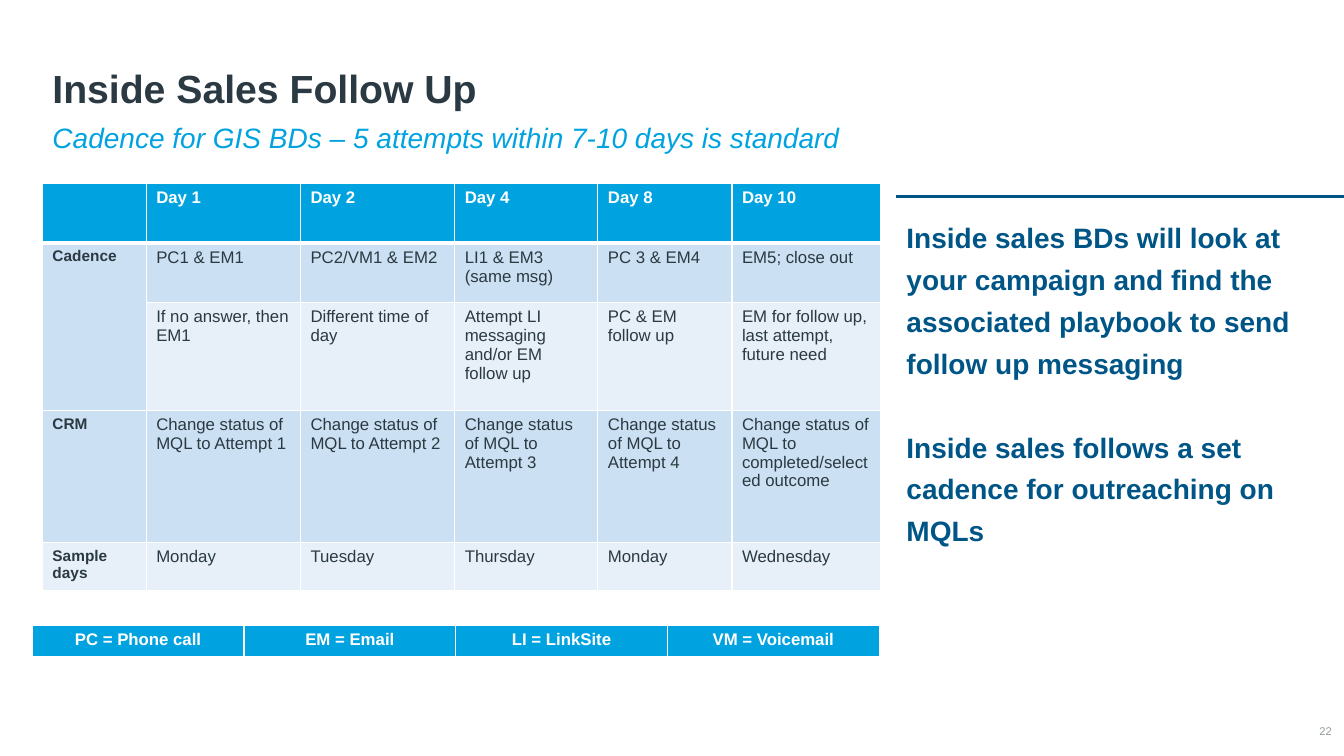
from lxml import etree
from pptx import Presentation
from pptx.dml.color import RGBColor
from pptx.enum import shapes, text
from pptx.oxml import ns
from pptx.util import Inches, Pt

THEME = {
    "font": "Arial",
    "ink": "2B3A42", "cyan": "00A3E0", "navy": "005587", "grey": "959CA0",
    "white": "FFFFFF", "band": "CCE0F3", "pale": "E7F0F9",
    "title": 28, "lead": 20, "cell": 12, "label": 11, "number": 8,
}


def write(para, words, color, size, **style):
    """Put words in a paragraph, coloured and sized by theme keys."""
    para.text = words
    para.font.color.rgb = RGBColor.from_string(THEME[color])
    formats = {"name": THEME["font"], "size": Pt(THEME[size]),
               "bold": False, "italic": False, **style}
    for name, value in formats.items():
        setattr(para.font, name, value)


def paint(cell, color, bottom):
    """Give a table cell white borders and a solid theme fill."""
    props = cell._tc.get_or_add_tcPr()
    for side, points in (("L", 1), ("R", 1), ("T", 1), ("B", bottom)):
        line = etree.SubElement(props, ns.qn(f"a:ln{side}"), w=str(Pt(points)))
        solid = etree.SubElement(line, ns.qn("a:solidFill"))
        etree.SubElement(solid, ns.qn("a:srgbClr"), val=THEME["white"])
    cell.fill.solid()
    cell.fill.fore_color.rgb = RGBColor.from_string(THEME[color])


deck = Presentation()
deck.slide_width, deck.slide_height = Inches(13.33), Inches(7.5)
page = deck.slides.add_slide(deck.slide_layouts.get_by_name("Comparison"))
holders = {holder.placeholder_format.idx: holder for holder in page.placeholders}
for unused in (2, 4):
    holders[unused]._element.getparent().remove(holders[unused]._element)

# Rule above the side notes
rule = page.shapes.add_connector(
    shapes.MSO_CONNECTOR.STRAIGHT,
    Inches(8.89), Inches(1.95), Inches(13.33), Inches(1.95))
rule.line.color.rgb = RGBColor.from_string(THEME["navy"])
rule.line.width = Pt(2)
etree.SubElement(rule._element.spPr, ns.qn("a:effectLst"))

# Title, subtitle and side notes
top, bottom = text.MSO_ANCHOR.TOP, text.MSO_ANCHOR.BOTTOM
notes = [
    "Inside sales BDs will look at your campaign and find the associated "
    "playbook to send follow up messaging",
    "Inside sales follows a set cadence for outreaching on MQLs",
]
headings = [
    (0, (0.42, 0.32, 12.4, 0.84), bottom, 0.9, ["Inside Sales Follow Up"],
     "ink", "title", {"bold": True}),
    (1, (0.42, 1.18, 12.4, 0.44), top, 0.9,
     ["Cadence for GIS BDs – 5 attempts within 7-10 days is standard"],
     "cyan", "lead", {"italic": True}),
    (3, (8.89, 2.05, 4.12, 4.82), top, 1.25, notes,
     "navy", "lead", {"bold": True}),
]
for idx, place, anchor, spacing, paragraphs, color, size, style in headings:
    box = holders[idx]
    box.left, box.top, box.width, box.height = map(Inches, place)
    frame = box.text_frame
    frame.auto_size = text.MSO_AUTO_SIZE.NONE
    frame.vertical_anchor = anchor
    for number, words in enumerate(paragraphs):
        para = frame.add_paragraph() if number else frame.paragraphs[0]
        para.alignment = text.PP_ALIGN.LEFT
        para.line_spacing = spacing
        para.space_before = Pt(30 if number else 0)
        write(para, words, color, size, **style)

# Cadence table
cadence_rows = [
    ["", "Day 1", "Day 2", "Day 4", "Day 8", "Day 10"],
    ["Cadence", "PC1 & EM1", "PC2/VM1 & EM2", "LI1 & EM3 (same msg)",
     "PC 3 & EM4", "EM5; close out"],
    ["", "If no answer, then EM1", "Different time of day",
     "Attempt LI messaging and/or EM follow up", "PC & EM follow up",
     "EM for follow up, last attempt, future need"],
    ["CRM", *(f"Change status of MQL to Attempt {n}" for n in range(1, 5)),
     "Change status of MQL to completed/selected outcome"],
    ["Sample days", "Monday", "Tuesday", "Thursday", "Monday", "Wednesday"],
]
cadence = page.shapes.add_table(
    5, 6, Inches(0.42), Inches(1.82), Inches(8.31), Inches(4.04)).table
for column, width in zip(cadence.columns, (1.03, 1.53, 1.53, 1.42, 1.33, 1.47)):
    column.width = Inches(width)
for row, height in zip(cadence.rows, (0.59, 0.59, 1.07, 1.31, 0.48)):
    row.height = Inches(height)
cadence.cell(1, 0).merge(cadence.cell(2, 0))
row_fills = ("cyan", "band", "pale", "band", "pale")
for r, (fill, entries) in enumerate(zip(row_fills, cadence_rows)):
    for c, words in enumerate(entries):
        cell = cadence.cell(r, c)
        paint(cell, fill, 1 if r else 3)
        if words:
            write(cell.text_frame.paragraphs[0], words, "ink" if r else "white",
                  "cell" if c else "label", bold=r == 0 or c == 0)

# Legend of abbreviations
legend_entries = ["PC = Phone call", "EM = Email", "LI = LinkSite", "VM = Voicemail"]
legend = page.shapes.add_table(
    1, 4, Inches(0.32), Inches(6.2), Inches(8.4), Inches(0.33)).table
for c, words in enumerate(legend_entries):
    cell = legend.cell(0, c)
    paint(cell, "cyan", 3)
    para = cell.text_frame.paragraphs[0]
    para.alignment = text.PP_ALIGN.CENTER
    write(para, words, "white", "cell", bold=True)

# Page number
number_box = page.shapes.add_textbox(
    Inches(12.82), Inches(7.16), Inches(0.39), Inches(0.19))
frame = number_box.text_frame
frame.word_wrap = True
frame.vertical_anchor = text.MSO_ANCHOR.MIDDLE
for side in ("left", "top", "right", "bottom"):
    setattr(frame, f"margin_{side}", 0)
frame.paragraphs[0].alignment = text.PP_ALIGN.RIGHT
write(frame.paragraphs[0], "22", "grey", "number")

deck.save("out.pptx")
